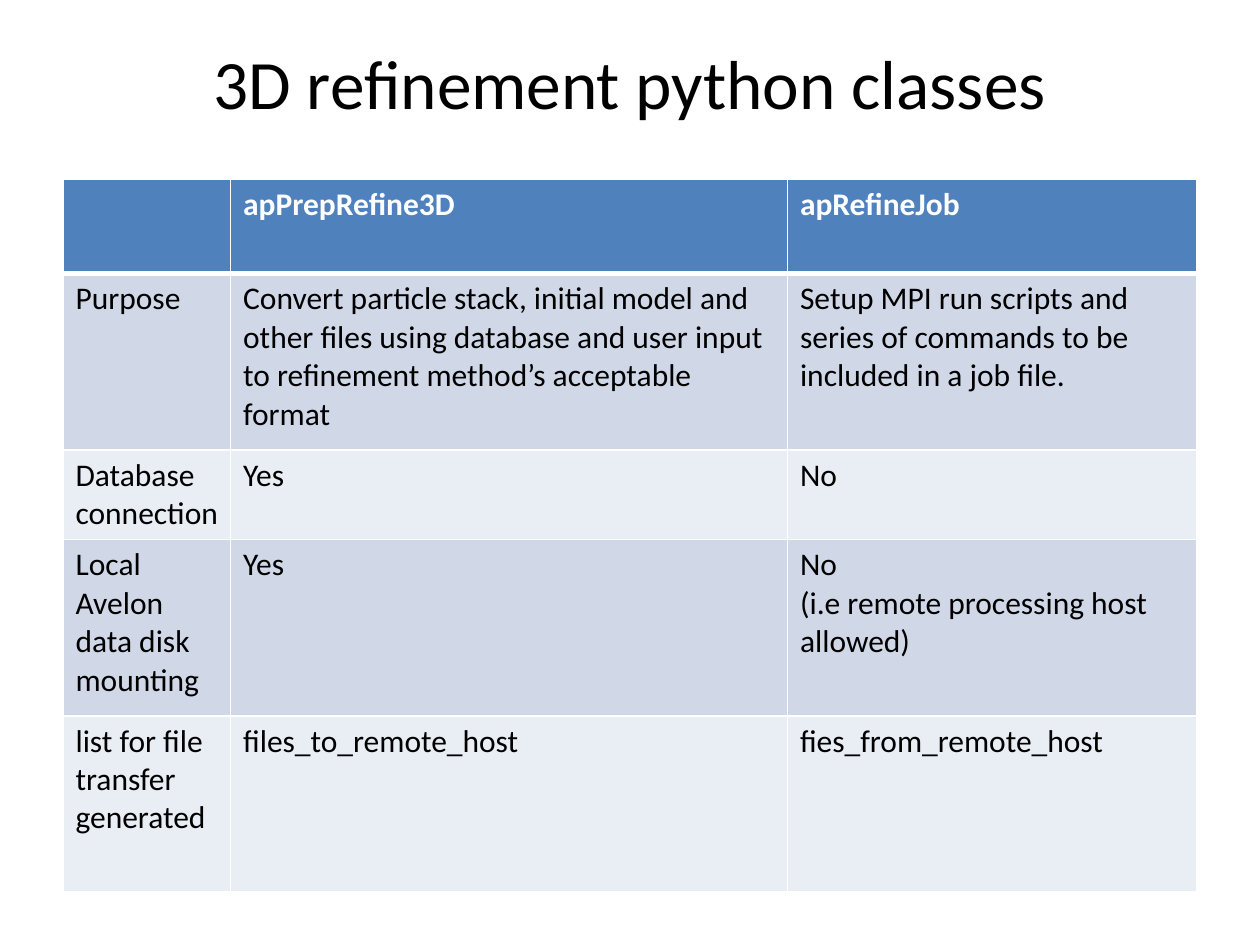
from typing import NamedTuple

from lxml.etree import SubElement
from pptx import Presentation
from pptx.dml.color import RGBColor
from pptx.enum.text import MSO_ANCHOR, PP_ALIGN
from pptx.oxml.ns import qn
from pptx.util import Inches, Pt

BLACK = RGBColor(0x00, 0x00, 0x00)
WHITE = RGBColor(0xFF, 0xFF, 0xFF)
HEADER_BLUE = RGBColor(0x4F, 0x81, 0xBD)
BANDS = (RGBColor(0xD0, 0xD8, 0xE8), RGBColor(0xE9, 0xED, 0xF4))

FONT = "Calibri"
SLIDE_W, SLIDE_H = Inches(10), Inches(7.5)
MARGIN = int(SLIDE_W * 0.05)
CONTENT_W = SLIDE_W - 2 * MARGIN
COLUMN_WIDTHS = (1.33, 4.42, 3.25)
LABEL_RIGHT_MARGIN = Inches(0.04)


class Row(NamedTuple):
    height: float
    label: str
    prep: str
    job: str


ROWS = (
    Row(0.75, "", "apPrepRefine3D", "apRefineJob"),
    Row(1.4, "Purpose",
        "Convert particle stack, initial model and other files using database "
        "and user input to refinement method’s acceptable format",
        "Setup MPI run scripts and series of commands to be included in a job file."),
    Row(0.69, "Database connection", "Yes", "No"),
    Row(1.4, "Local Avelon data disk mounting", "Yes",
        "No\n(i.e remote processing host allowed)"),
    Row(1.4, "list for file transfer generated",
        "files_to_remote_host", "fies_from_remote_host"),
)


def style_paragraph(p, size: float, color: RGBColor, bold: bool = False) -> None:
    p.font.name = FONT
    p.font.size = Pt(size)
    p.font.bold = bold
    p.font.color.rgb = color


def add_title(s, text: str) -> None:
    title = s.shapes.title
    title.left, title.top = MARGIN, int(SLIDE_H * 0.04)
    title.width, title.height = CONTENT_W, Inches(0.7)
    tf = title.text_frame
    tf.text = text
    tf.vertical_anchor = MSO_ANCHOR.MIDDLE
    p = tf.paragraphs[0]
    p.alignment = PP_ALIGN.CENTER
    style_paragraph(p, 39.6, BLACK)


def set_borders(cell, top: float, bottom: float) -> None:
    """Draw white cell borders; left and right are 1 pt wide."""
    tc_pr = cell._tc.get_or_add_tcPr()
    widths = (("lnL", 1), ("lnR", 1), ("lnT", top), ("lnB", bottom))
    for i, (side, width) in enumerate(widths):
        ln = SubElement(tc_pr, qn(f"a:{side}"), w=str(Pt(width)))
        fill = SubElement(ln, qn("a:solidFill"))
        SubElement(fill, qn("a:srgbClr"), val=str(WHITE))
        tc_pr.insert(i, ln)


def fill_cell(cell, text: str, fill: RGBColor, color: RGBColor, bold: bool) -> None:
    cell.fill.solid()
    cell.fill.fore_color.rgb = fill
    cell.text_frame.text = text
    for p in cell.text_frame.paragraphs:
        style_paragraph(p, 18, color, bold)


def add_class_table(s, rows: tuple[Row, ...]) -> None:
    height = Inches(sum(row.height for row in rows))
    table = s.shapes.add_table(len(rows), len(COLUMN_WIDTHS), MARGIN,
                               Inches(1.42), CONTENT_W, height).table
    for column, width in zip(table.columns, COLUMN_WIDTHS):
        column.width = Inches(width)
    for i, row in enumerate(rows):
        table.rows[i].height = Inches(row.height)
        header = i == 0
        fill = HEADER_BLUE if header else BANDS[(i - 1) % 2]
        for j, text in enumerate((row.label, row.prep, row.job)):
            cell = table.cell(i, j)
            fill_cell(cell, text, fill, WHITE if header else BLACK, header)
            set_borders(cell, top=3 if i == 1 else 1, bottom=3 if header else 1)
        table.cell(i, 0).margin_right = LABEL_RIGHT_MARGIN


def main() -> None:
    prs = Presentation()
    prs.slide_width, prs.slide_height = SLIDE_W, SLIDE_H
    s = prs.slides.add_slide(prs.slide_layouts[5])
    add_title(s, "3D refinement python classes")
    add_class_table(s, ROWS)
    prs.save("out.pptx")


if __name__ == "__main__":
    main()
